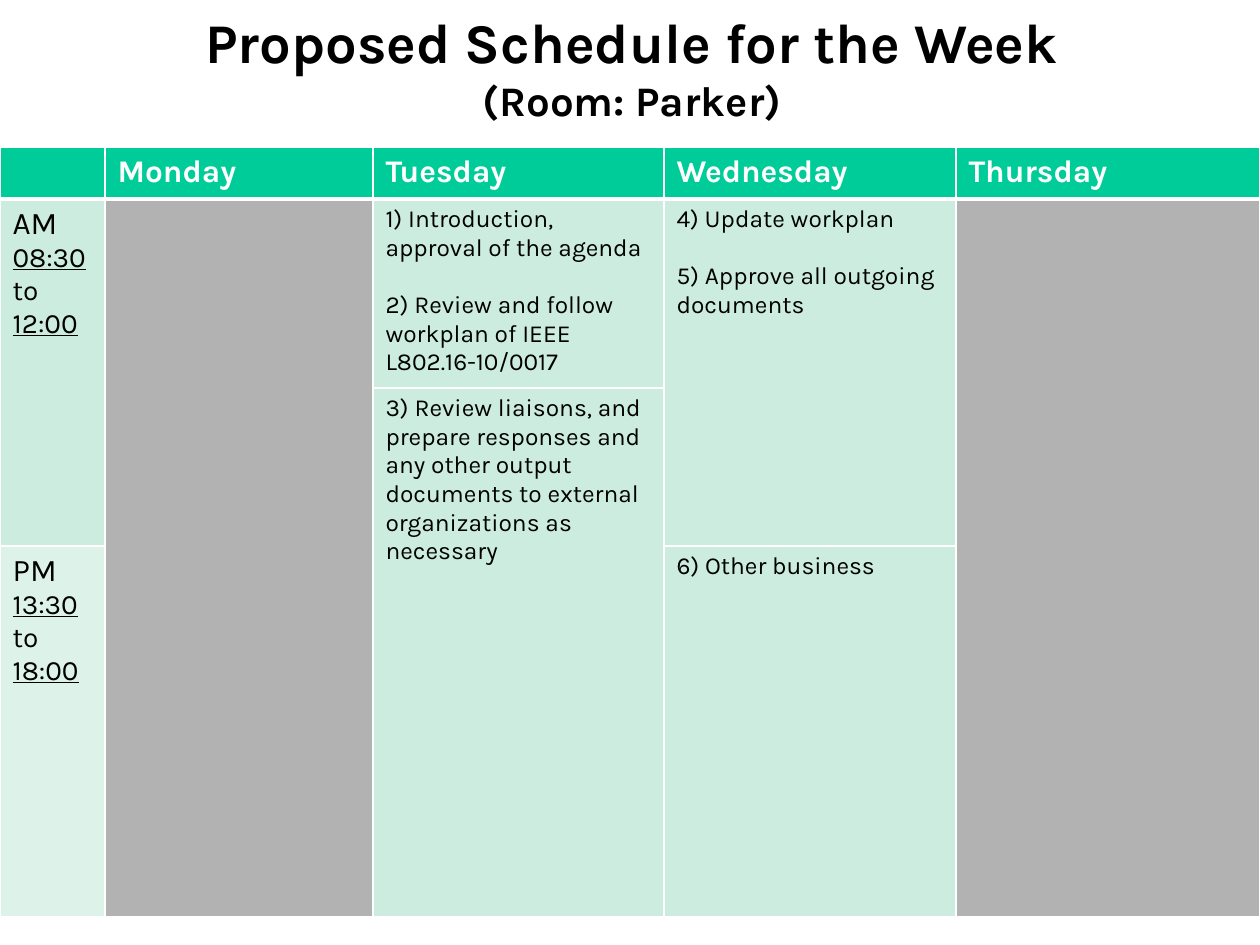
from dataclasses import dataclass

from lxml import etree
from pptx import Presentation
from pptx.dml.color import RGBColor
from pptx.enum.text import MSO_ANCHOR, PP_ALIGN
from pptx.oxml.ns import qn
from pptx.util import Pt

CENTER = PP_ALIGN.CENTER
MIDDLE = MSO_ANCHOR.MIDDLE
TITLE_ONLY = 5
EMU_PER_PX = 914400 / 126


@dataclass(frozen=True)
class Theme:
    """Font, colours and type sizes of the schedule."""

    font: str = "Karla"
    ink: str = "000000"
    white: str = "FFFFFF"
    header: str = "00CC99"
    session: str = "CBECDE"
    afternoon: str = "DDF3EA"
    closed: str = "B2B2B2"
    title: int = 32
    room: int = 24
    heading: int = 18
    hours: int = 16
    agenda: int = 14
    agenda_gap: float = 16.4
    rule: int = 1
    header_rule: int = 3


THEME = Theme()
COLUMNS = (105, 268, 291, 292, 304)
ROWS = (52, 189, 158, 371)
DAYS = ("", "Monday", "Tuesday", "Wednesday", "Thursday")
PERIODS = (
    (1, 2, "AM", "08:30", "12:00", THEME.session),
    (3, 1, "PM", "13:30", "18:00", THEME.afternoon),
)
SESSIONS = (
    (1, 2, 1, ("1) Introduction, approval of the agenda",
               "2) Review and follow workplan of IEEE L802.16-10/0017")),
    (2, 2, 2, ("3) Review liaisons, and prepare responses and any other output "
               "documents to external organizations as necessary",)),
    (1, 3, 2, ("4) Update workplan", "5) Approve all outgoing documents")),
    (3, 3, 1, ("6) Other business",)),
)
CLOSED_COLUMNS = (1, 4)


def px(length):
    """Turn px into EMU."""
    return round(length * EMU_PER_PX)


def add_run(paragraph, text, size, color=THEME.ink, bold=False, underline=False):
    """Append one formatted run."""
    run = paragraph.add_run()
    run.text = text
    font = run.font
    font.name, font.size = THEME.font, Pt(size)
    font.bold, font.underline = bold, underline
    font.color.rgb = RGBColor.from_string(color)


def place_title(title, left, top, width, height):
    """Set the schedule title and its room line in the given box."""
    title.left, title.top = px(left), px(top)
    title.width, title.height = px(width), px(height)
    frame = title.text_frame
    frame.word_wrap = True
    frame.vertical_anchor = MIDDLE
    heading = frame.paragraphs[0]
    heading.alignment = CENTER
    add_run(heading, "Proposed Schedule for the Week", THEME.title, bold=True)
    heading.add_line_break()
    add_run(heading, "(Room: Parker)", THEME.room, bold=True)


def rule_cell(cell, row):
    """Draw the white rules round a cell, heavier under the header."""
    properties = cell._tc.get_or_add_tcPr()
    heavy_side = {0: "B", 1: "T"}.get(row)
    for side in "LRTB":
        weight = THEME.header_rule if side == heavy_side else THEME.rule
        line = etree.SubElement(properties, qn(f"a:ln{side}"), w=str(Pt(weight)))
        fill = etree.SubElement(line, qn("a:solidFill"))
        etree.SubElement(fill, qn("a:srgbClr"), val=THEME.white)


def fill_cell(cell, color):
    """Give a cell a solid fill."""
    cell.fill.solid()
    cell.fill.fore_color.rgb = RGBColor.from_string(color)


def open_block(table, row, column, row_span, color):
    """Merge the rows of one block, fill it and return its cell."""
    block = table.cell(row, column)
    if row_span > 1:
        block.merge(table.cell(row + row_span - 1, column))
    fill_cell(block, color)
    return block


def write_period(block, name, start, end):
    """Write a half-day with its underlined hours."""
    add_run(block.text_frame.paragraphs[0], name, THEME.heading)
    hours = block.text_frame.add_paragraph()
    add_run(hours, start, THEME.hours, underline=True)
    add_run(hours, " to ", THEME.hours)
    add_run(hours, end, THEME.hours, underline=True)


def write_agenda(block, items):
    """Write agenda items one line apart."""
    frame = block.text_frame
    for index, item in enumerate(items):
        paragraph = frame.add_paragraph() if index else frame.paragraphs[0]
        if index:
            paragraph.space_before = Pt(THEME.agenda_gap)
        add_run(paragraph, item, THEME.agenda)


def place_schedule(slide, left, top):
    """Build the week table from its top left corner."""
    table = slide.shapes.add_table(
        len(ROWS), len(COLUMNS), px(left), px(top), px(sum(COLUMNS)), px(sum(ROWS))
    ).table
    for column, width in zip(table.columns, COLUMNS):
        column.width = px(width)
    for row, height in enumerate(ROWS):
        table.rows[row].height = px(height)
        for cell in table.rows[row].cells:
            rule_cell(cell, row)

    for column, day in enumerate(DAYS):
        heading = open_block(table, 0, column, 1, THEME.header)
        if day:
            add_run(heading.text_frame.paragraphs[0], day, THEME.heading,
                    THEME.white, bold=True)
    for column in CLOSED_COLUMNS:
        open_block(table, 1, column, len(ROWS) - 1, THEME.closed)
    for row, span, name, start, end, color in PERIODS:
        write_period(open_block(table, row, 0, span, color), name, start, end)
    for row, column, span, items in SESSIONS:
        write_agenda(open_block(table, row, column, span, THEME.session), items)


def main():
    """Build and save the weekly schedule."""
    presentation = Presentation()
    presentation.slide_width, presentation.slide_height = px(1260), px(945)
    slide = presentation.slides.add_slide(presentation.slide_layouts[TITLE_ONLY])
    place_title(slide.shapes.title, 65, 6, 1134, 120)
    place_schedule(slide, 0, 147)
    presentation.save("out.pptx")


if __name__ == "__main__":
    main()
